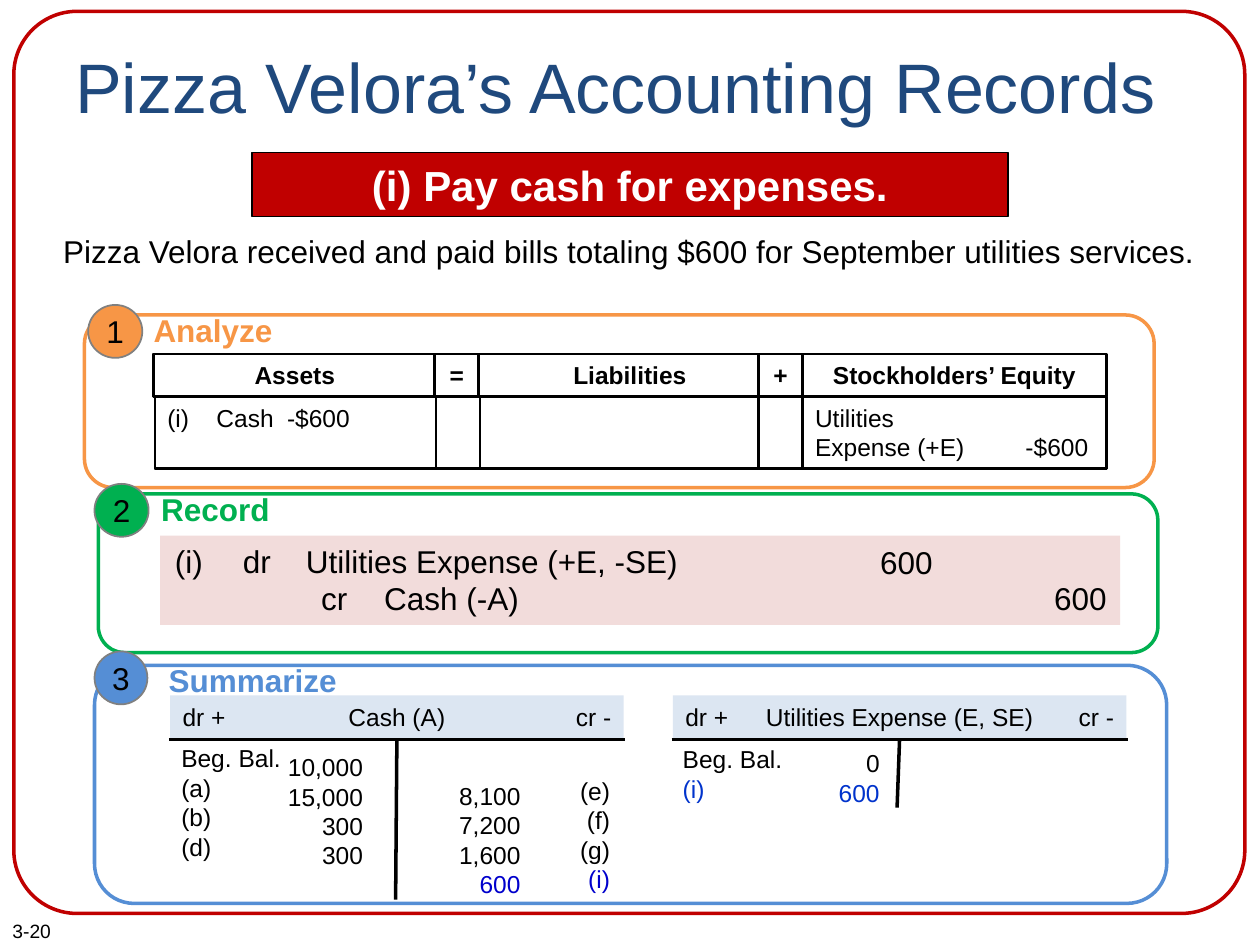
"""Build the accounting records slide for paying cash expenses."""
from dataclasses import dataclass
from typing import Any, Optional

from lxml.etree import SubElement
from pptx import Presentation
from pptx.dml.color import RGBColor
from pptx.enum.shapes import MSO_CONNECTOR, MSO_SHAPE
from pptx.enum.text import MSO_ANCHOR, PP_ALIGN
from pptx.oxml.ns import qn
from pptx.util import Inches, Pt

BLACK = RGBColor(0x00, 0x00, 0x00)
WHITE = RGBColor(0xFF, 0xFF, 0xFF)
GRAY = RGBColor(0x80, 0x80, 0x80)
RED = RGBColor(0xC0, 0x00, 0x00)
NAVY = RGBColor(0x1F, 0x49, 0x7D)
ORANGE = RGBColor(0xF7, 0x96, 0x46)
GREEN = RGBColor(0x00, 0xB0, 0x50)
BLUE = RGBColor(0x55, 0x8E, 0xD5)
PINK = RGBColor(0xF2, 0xDC, 0xDB)
PALE_BLUE = RGBColor(0xDC, 0xE6, 0xF2)
CASH_BLUE = RGBColor(0x00, 0x00, 0xCC)
EXPENSE_BLUE = RGBColor(0x00, 0x33, 0xCC)
LEFT, CENTER, RIGHT = PP_ALIGN.LEFT, PP_ALIGN.CENTER, PP_ALIGN.RIGHT


@dataclass(frozen=True)
class Area:
    left: float
    top: float
    width: float
    height: float

    def lengths(self) -> list[int]:
        return [Inches(side) for side in (self.left, self.top, self.width, self.height)]


@dataclass(frozen=True)
class Style:
    size: float = 14
    color: RGBColor = BLACK
    bold: bool = False
    align: PP_ALIGN = LEFT
    anchor: MSO_ANCHOR = MSO_ANCHOR.TOP
    inset: float = 0.1
    tabs: tuple[float, ...] = ()
    last_color: Optional[RGBColor] = None


@dataclass(frozen=True)
class Panel:
    number: str
    title: str
    color: RGBColor
    frame: Area
    badge: Area
    title_left: float
    title_top: float


@dataclass(frozen=True)
class Column:
    area: Area
    lines: tuple[str, ...]
    align: PP_ALIGN
    last_color: Optional[RGBColor] = None


@dataclass(frozen=True)
class Account:
    name: str
    left: float
    stem_end: tuple[float, float]
    columns: tuple[Column, ...]


PANELS = (
    Panel("1", "Analyze", ORANGE, Area(0.67, 2.5, 8.49, 1.37), Area(0.7, 2.42, 0.43, 0.42), 1.12, 2.42),
    Panel("2", "Record", GREEN, Area(0.78, 3.92, 8.41, 1.26), Area(0.75, 3.84, 0.43, 0.42), 1.18, 3.84),
    Panel("3", "Summarize", BLUE, Area(0.75, 5.28, 8.51, 1.89), Area(0.75, 5.17, 0.42, 0.42), 1.24, 5.2),
)
HEADINGS = (
    ("Liabilities", 1.22, 7.56),
    ("Assets", 1.22, 2.24),
    ("Stockholders’ Equity", 6.37, 2.41),
    ("+", 6.02, 0.35),
    ("=", 3.45, 0.35),
)
ENTRIES = (
    ((), 1.23, 7.55, ()),
    (("(i)\tCash\t-$600",), 1.23, 2.23, (0.39, 0.95)),
    ((), 3.81, 2.21, ()),
    (("Utilities", "Expense (+E)\t-$600"), 6.37, 2.41, (1.67,)),
)
JOURNAL = (
    ("(i)", 1.29, 4.25, 0.57, LEFT),
    ("dr\tUtilities Expense (+E, -SE)", 1.83, 4.25, 4.3, LEFT),
    ("cr\tCash (-A)", 2.45, 4.55, 3.68, LEFT),
    ("600", 6.31, 4.26, 1.19, RIGHT),
    ("600", 7.69, 4.55, 1.19, RIGHT),
)
ACCOUNTS = (
    Account("Cash (A)", 1.35, (3.14, 7.14), (
        Column(Area(1.34, 5.85, 1.78, 1.04), ("Beg. Bal.", "(a)", "(b)", "(d)"), LEFT),
        Column(Area(2.08, 5.92, 0.9, 1.04), ("10,000", "15,000", "300", "300"), RIGHT),
        Column(Area(3.33, 6.15, 0.9, 1.04), ("8,100", "7,200", "1,600", "600"), RIGHT, CASH_BLUE),
        Column(Area(3.14, 6.11, 1.8, 1.04), ("(e)", "(f)", "(g)", "(i)"), RIGHT, CASH_BLUE),
    )),
    Account("Utilities Expense (E, SE)", 5.34, (7.12, 6.41), (
        Column(Area(5.32, 5.86, 1.78, 0.57), ("Beg. Bal.", "(i)"), LEFT, EXPENSE_BLUE),
        Column(Area(6.18, 5.89, 0.9, 0.57), ("0", "600"), RIGHT, EXPENSE_BLUE),
    )),
)


def write(box: Any, lines: tuple[str, ...], style: Style) -> None:
    frame = box.text_frame
    layout = {"word_wrap": True, "vertical_anchor": style.anchor,
              "margin_left": Inches(style.inset), "margin_right": Inches(style.inset)}
    for name, value in layout.items():
        setattr(frame, name, value)
    for index, line in enumerate(lines):
        para = frame.paragraphs[0] if index == 0 else frame.add_paragraph()
        para.alignment = style.align
        if style.tabs:
            stops = SubElement(para._p.get_or_add_pPr(), qn("a:tabLst"))
            for stop in style.tabs:
                SubElement(stops, qn("a:tab"), pos=str(Inches(stop)), algn="l")
        span = para.add_run()
        span.text = line
        for name, value in {"name": "Arial", "size": Pt(style.size), "bold": style.bold}.items():
            setattr(span.font, name, value)
        is_last = index == len(lines) - 1
        span.font.color.rgb = style.last_color if is_last and style.last_color else style.color


def add_text(shapes: Any, area: Area, lines: tuple[str, ...], style: Style) -> None:
    write(shapes.add_textbox(*area.lengths()), lines, style)


def add_box(shapes: Any, area: Area, fill: Optional[RGBColor] = None, line: Optional[RGBColor] = None,
            weight: float = 1.5, kind: MSO_SHAPE = MSO_SHAPE.RECTANGLE) -> Any:
    box = shapes.add_shape(kind, *area.lengths())
    box.shadow.inherit = False
    if fill is None:
        box.fill.background()
    else:
        box.fill.solid()
        box.fill.fore_color.rgb = fill
    if line is None:
        box.line.fill.background()
    else:
        box.line.color.rgb = line
        box.line.width = Pt(weight)
    return box


def add_line(shapes: Any, start: tuple[float, float], end: tuple[float, float]) -> Any:
    points = [Inches(value) for value in (*start, *end)]
    line = shapes.add_connector(MSO_CONNECTOR.STRAIGHT, *points)
    line.line.color.rgb = BLACK
    line.line.width = Pt(2)
    SubElement(line._element.spPr, qn("a:effectLst"))
    return line


def add_panel(page: Any, panel: Panel) -> Any:
    shapes = page.shapes.add_group_shape().shapes
    add_box(shapes, panel.frame, line=panel.color, weight=2, kind=MSO_SHAPE.ROUNDED_RECTANGLE)
    badge = add_box(shapes, panel.badge, panel.color, GRAY, 1, MSO_SHAPE.OVAL)
    write(badge, (panel.number,), Style(18, align=CENTER, anchor=MSO_ANCHOR.MIDDLE, inset=0))
    add_text(shapes, Area(panel.title_left, panel.title_top, 1.71, 0.4), (panel.title,),
             Style(18, panel.color, True))
    return shapes


def add_equation(shapes: Any) -> None:
    for text, left, width in HEADINGS:
        box = add_box(shapes, Area(left, 2.81, width, 0.34), WHITE, BLACK)
        write(box, (text,), Style(bold=True, align=CENTER))
    for lines, left, width, tabs in ENTRIES:
        box = add_box(shapes, Area(left, 3.15, width, 0.57), line=BLACK)
        write(box, lines, Style(tabs=tabs))


def add_journal(shapes: Any) -> None:
    add_box(shapes, Area(1.27, 4.25, 7.62, 0.71), PINK)
    for text, left, top, width, align in JOURNAL:
        add_text(shapes, Area(left, top, width, 0.4), (text,), Style(18, align=align, tabs=(0.5,)))


def add_account(shapes: Any, account: Account) -> None:
    header = add_box(shapes, Area(account.left, 5.52, 3.6, 0.34), PALE_BLUE)
    write(header, (account.name,), Style(align=CENTER))
    add_text(shapes, Area(account.left, 5.52, 0.59, 0.34), ("dr +",), Style())
    add_text(shapes, Area(account.left + 3.01, 5.52, 0.59, 0.34), ("cr -",), Style(align=RIGHT))
    add_line(shapes, (account.left - 0.01, 5.87), (account.left + 3.61, 5.87))
    stem = add_line(shapes, (account.left + 1.8, 5.86), account.stem_end)
    stem.begin_connect(header, 2)
    for column in account.columns:
        add_text(shapes, column.area, column.lines, Style(align=column.align, last_color=column.last_color))


def main() -> None:
    deck = Presentation()
    deck.slide_width, deck.slide_height = Inches(10), Inches(7.5)
    page = deck.slides.add_slide(deck.slide_layouts[6])
    add_text(page.shapes, Area(0, 7.25, 1.42, 0.29), ("3-20",), Style(11))
    border = add_box(page.shapes, Area(0.11, 0.09, 9.77, 7.16), line=RED, weight=2,
                     kind=MSO_SHAPE.ROUNDED_RECTANGLE)
    border.adjustments[0] = 0.07
    add_text(page.shapes, Area(0.5, 0.3, 9, 1.25), ("Pizza Velora’s Accounting Records",), Style(40, NAVY))
    banner = add_box(page.shapes, Area(2, 1.21, 6, 0.51), RED, BLACK, 0.75)
    write(banner, ("(i) Pay cash for expenses.",),
          Style(24, WHITE, True, CENTER, MSO_ANCHOR.MIDDLE))
    add_text(page.shapes, Area(0.28, 1.79, 9.42, 0.4),
             ("Pizza Velora received and paid bills totaling $600 for September utilities services.",),
             Style(18, align=CENTER))
    analyze, record, summarize = (add_panel(page, panel) for panel in PANELS)
    add_equation(analyze)
    add_journal(record)
    for account in ACCOUNTS:
        add_account(summarize, account)
    deck.save("out.pptx")


if __name__ == "__main__":
    main()
